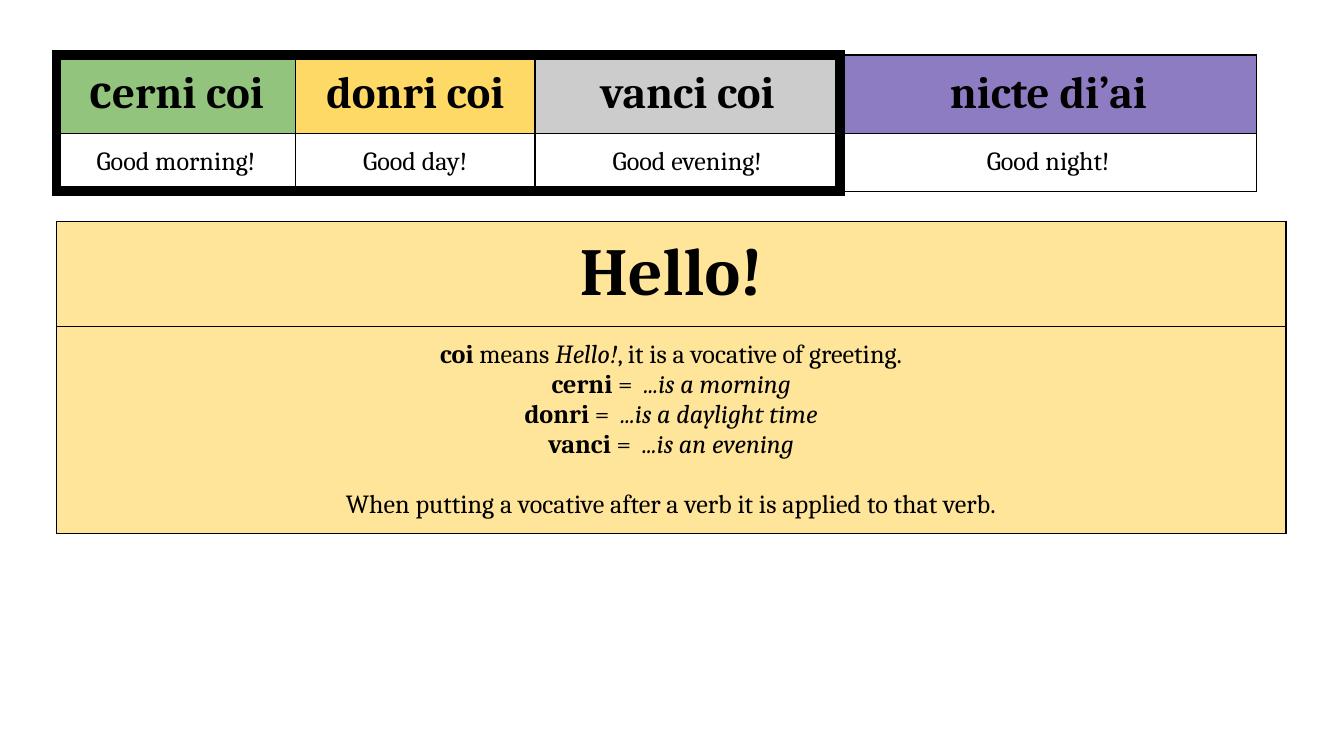
from dataclasses import dataclass

from lxml import etree
from pptx import Presentation
from pptx.dml.color import RGBColor
from pptx.enum.text import PP_ALIGN
from pptx.oxml.ns import qn
from pptx.util import Inches, Pt

CENTER = PP_ALIGN.CENTER
BLANK = 6
BOXED = 3
WIDTH = 10


@dataclass(frozen=True)
class Theme:
    """Colours, font, type sizes and line widths of the slide."""
    font: str = "Cambria"
    ink: str = "000000"
    cream: str = "FFE599"
    green: str = "93C47D"
    gold: str = "FFD966"
    grey: str = "CCCCCC"
    violet: str = "8E7CC3"
    title: int = 36
    head: int = 24
    body: int = 14
    thin: float = 0.75
    thick: float = 6


THEME = Theme()
GREETINGS = [
    ("сerni coi", "Good morning!", THEME.green),
    ("donri coi", "Good day!", THEME.gold),
    ("vanci coi", "Good evening!", THEME.grey),
    ("nicte di’ai", "Good night!", THEME.violet),
]
WORDS = [
    ("cerni", " ...is a morning"),
    ("donri", " ...is a daylight time"),
    ("vanci", " ...is an evening"),
]


def add_text(para, text, size=THEME.body, bold=False, italic=False):
    """Add one formatted run to a centred paragraph."""
    para.alignment = CENTER
    run = para.add_run()
    run.text = text
    font = run.font
    font.name, font.size = THEME.font, Pt(size)
    font.bold, font.italic = bold, italic
    font.color.rgb = RGBColor.from_string(THEME.ink)


def add_border(cell, side, width):
    """Draw one side of a cell as a solid line."""
    props = cell._tc.get_or_add_tcPr()
    line = etree.SubElement(props, qn("a:ln" + side), w=str(Pt(width)))
    fill = etree.SubElement(line, qn("a:solidFill"))
    etree.SubElement(fill, qn("a:srgbClr"), val=THEME.ink)


def style_cell(cell, fill=None, thick=""):
    """Set margins, borders and fill; sides named in thick are heavy."""
    cell.margin_left = cell.margin_right = Inches(0.1)
    cell.margin_top = cell.margin_bottom = Inches(0.1)
    for side in "LRTB":
        add_border(cell, side, THEME.thick if side in thick else THEME.thin)
    if fill:
        cell.fill.solid()
        cell.fill.fore_color.rgb = RGBColor.from_string(fill)
    else:
        cell.fill.background()


def add_grid(slide, left, top, widths, heights):
    """Add a plain table with the given column widths and row heights."""
    frame = slide.shapes.add_table(
        len(heights), len(widths), Inches(left), Inches(top),
        Inches(sum(widths)), Inches(sum(heights)))
    table = frame.table
    table.first_row = table.horz_banding = False
    for col, width in zip(table.columns, widths):
        col.width = Inches(width)
    for row, height in zip(table.rows, heights):
        row.height = Inches(height)
    return table


def heavy_sides(row, col):
    """Name the sides of a cell that lie on the box around the coi phrases."""
    sides = "L" if col in (0, BOXED) else ""
    if col == BOXED - 1:
        sides += "R"
    if col < BOXED:
        sides += "TB"[row]
    return sides


def add_phrases(slide):
    """Add the table of greetings with the coi phrases boxed."""
    table = add_grid(slide, 0.42, 0.41, [1.78, 1.78, 2.27, 3.1], [0.58, 0.43])
    for col, (phrase, sense, color) in enumerate(GREETINGS):
        head, body = table.cell(0, col), table.cell(1, col)
        style_cell(head, color, heavy_sides(0, col))
        style_cell(body, thick=heavy_sides(1, col))
        add_text(head.text_frame.paragraphs[0], phrase, size=THEME.head, bold=True)
        add_text(body.text_frame.paragraphs[0], sense)


def add_lesson(slide):
    """Add the table that explains the greeting."""
    count = 6
    table = add_grid(slide, 0.42, 1.65, [9.15 / count] * count, [0.78, 1.54])
    for row in range(2):
        for col in range(count):
            style_cell(table.cell(row, col), THEME.cream)
        table.cell(row, 0).merge(table.cell(row, count - 1))
    title = table.cell(0, 0).text_frame.paragraphs[0]
    add_text(title, "Hello!", size=THEME.title, bold=True)
    frame = table.cell(1, 0).text_frame
    intro = frame.paragraphs[0]
    add_text(intro, "coi", bold=True)
    add_text(intro, " means ")
    add_text(intro, "Hello!", italic=True)
    add_text(intro, ", it is a vocative of greeting.")
    for word, sense in WORDS:
        para = frame.add_paragraph()
        add_text(para, word, bold=True)
        add_text(para, " = ")
        add_text(para, sense, italic=True)
    note = frame.add_paragraph()
    note.space_before = Pt(16)
    add_text(note, "When putting a vocative after a verb it is applied to that verb.")


def main():
    """Build and save the slide."""
    deck = Presentation()
    deck.slide_width, deck.slide_height = Inches(WIDTH), Inches(WIDTH * 9 / 16)
    slide = deck.slides.add_slide(deck.slide_layouts[BLANK])
    add_lesson(slide)
    add_phrases(slide)
    deck.save("out.pptx")


if __name__ == "__main__":
    main()
